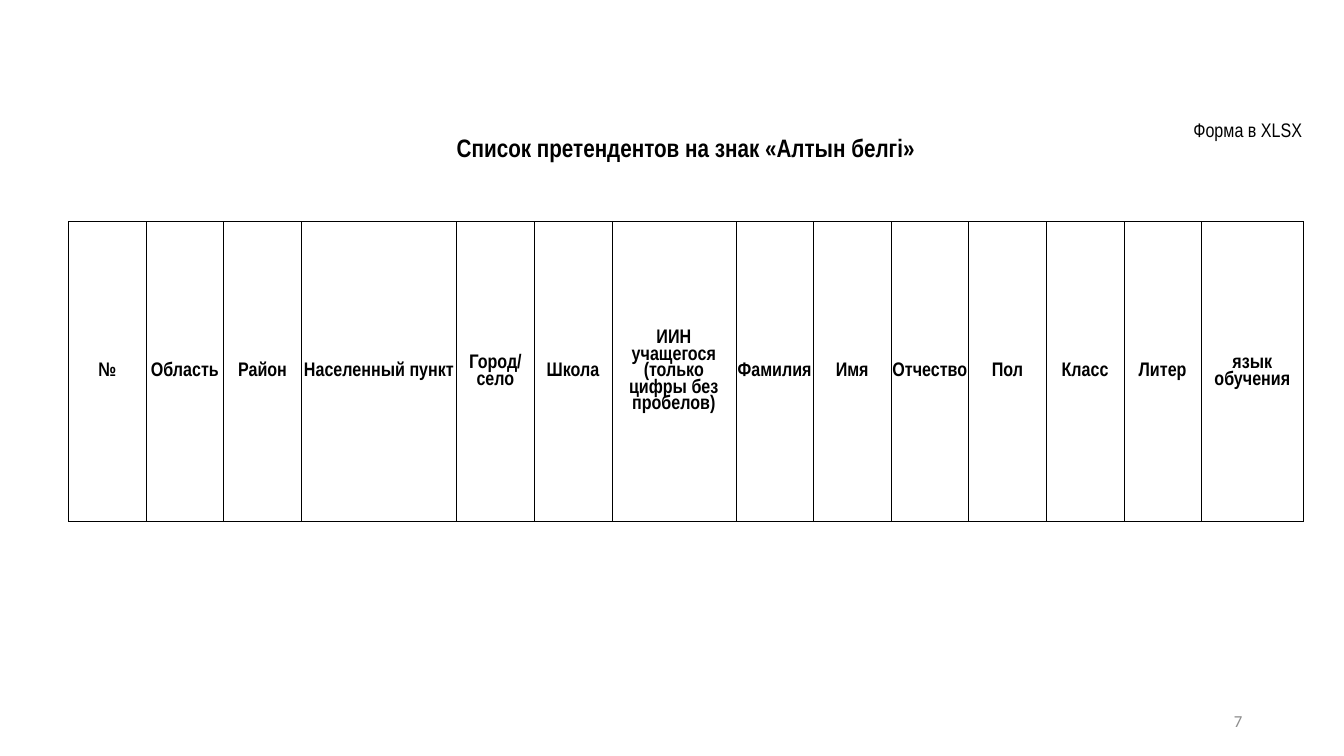
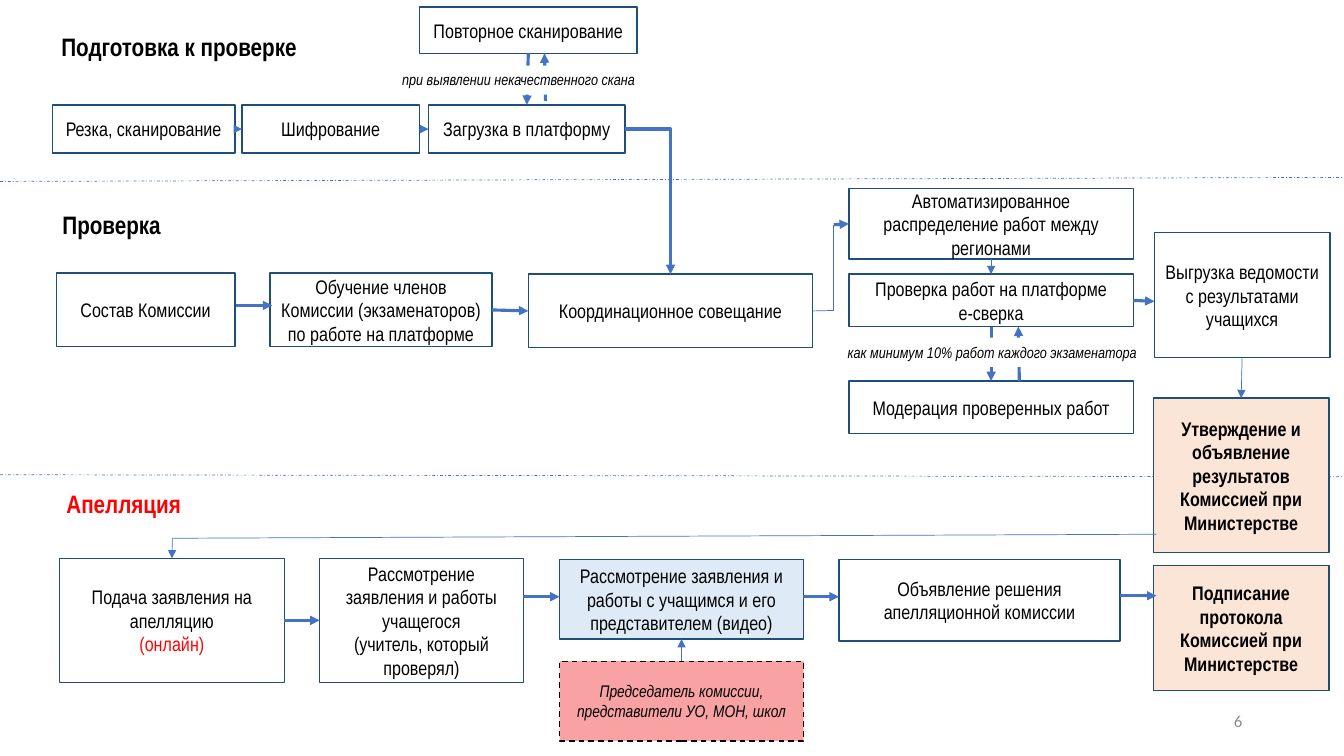
"""Build two slides: the award candidate form and the exam checking workflow."""
from dataclasses import dataclass, replace
from typing import NamedTuple

from pptx import Presentation
from pptx.dml.color import RGBColor
from pptx.enum.dml import MSO_LINE
from pptx.enum.shapes import MSO_CONNECTOR, MSO_SHAPE
from pptx.enum.text import MSO_ANCHOR, PP_ALIGN
from pptx.oxml.ns import qn
from pptx.oxml.xmlchemy import OxmlElement
from pptx.shapes.autoshape import Shape
from pptx.slide import Slide
from pptx.table import _Cell
from pptx.text.text import TextFrame
from pptx.util import Emu, Pt

LEFT, CENTER, RIGHT = PP_ALIGN.LEFT, PP_ALIGN.CENTER, PP_ALIGN.RIGHT
TOP_ANCHOR, MIDDLE_ANCHOR = MSO_ANCHOR.TOP, MSO_ANCHOR.MIDDLE
RECTANGLE = MSO_SHAPE.RECTANGLE
STRAIGHT, ELBOW = MSO_CONNECTOR.STRAIGHT, MSO_CONNECTOR.ELBOW
DASH, DASH_DOT = MSO_LINE.DASH, MSO_LINE.DASH_DOT
TOP, WEST, BOTTOM, EAST = range(4)

COLORS = {
    "black": "000000", "white": "FFFFFF", "red": "FF0000", "gray": "8C8C8C",
    "navy": "1F4E79", "blue": "4472C4", "peach": "FBE5D6", "sky": "DEEBF7",
    "pink": "F8A2A4",
}
EMU_PER_PX = 9144
THIN, MEDIUM, THICK = 0.5, 1, 2.25
FORM_SPACING = 0.89


@dataclass(frozen=True)
class Style:
    size: int = 14
    bold: bool = False
    italic: bool = False
    color: str = "black"
    align: PP_ALIGN = CENTER
    font: str = "Arial Narrow"
    spacing: float = 1.0


BODY = Style()
STRONG = Style(bold=True)
HEADING = Style(size=18, bold=True, align=LEFT)
REMARK = Style(size=11, italic=True, align=LEFT)
PAGE_NUMBER = Style(size=12, color="gray", align=RIGHT, font="Calibri")
COLUMN_HEAD = Style(bold=True, spacing=FORM_SPACING)


class Area(NamedTuple):
    left: int
    top: int
    width: int
    height: int


@dataclass(frozen=True)
class Step:
    key: str
    area: Area
    text: str
    fill: str = "white"
    style: Style = BODY
    last_color: str = "black"
    dashed: bool = False


class Joint(NamedTuple):
    step: str
    side: int


class Point(NamedTuple):
    x: int
    y: int


class Link(NamedTuple):
    start: Joint | Point
    end: Joint | Point
    weight: float = THICK
    arrow: bool = True
    elbow: bool = False
    dash: MSO_LINE | None = None


class Caption(NamedTuple):
    area: Area
    text: str
    style: Style


FORM_AREA = Area(68, 63, 1225, 454)
FORM_ROWS = (157, 297)
FORM_COLUMNS = (
    ("№", 77), ("Область", 77), ("Район", 77), ("Населенный пункт", 154),
    ("Город/ село", 77), ("Школа", 77),
    ("ИИН учащегося (только цифры без пробелов)", 123),
    ("Фамилия", 77), ("Имя", 77), ("Отчество", 77), ("Пол", 77),
    ("Класс", 77), ("Литер", 77), ("язык обучения", 101),
)
FORM_TITLE = (
    ("Форма в XLSX", Style(align=RIGHT, spacing=FORM_SPACING)),
    ("Список претендентов на знак «Алтын белгі»",
     Style(size=18, bold=True, spacing=FORM_SPACING)),
)

STEPS = (
    Step("cutting", Area(52, 104, 181, 48), "Резка, сканирование"),
    Step("encoding", Area(240, 104, 176, 48), "Шифрование"),
    Step("upload", Area(425, 104, 195, 48), "Загрузка в платформу"),
    Step("rescan", Area(416, 7, 216, 46), "Повторное сканирование"),
    Step("commission", Area(56, 271, 177, 73), "Состав Комиссии"),
    Step("training", Area(268, 271, 220, 73),
         "Обучение членов Комиссии (экзаменаторов) по работе на платформе"),
    Step("meeting", Area(524, 272, 282, 73), "Координационное совещание"),
    Step("distribution", Area(842, 187, 282, 70),
         "Автоматизированное распределение работ между регионами"),
    Step("marking", Area(842, 272, 282, 52),
         "Проверка работ на платформе\nе-сверка"),
    Step("moderation", Area(842, 378, 282, 52), "Модерация проверенных работ"),
    Step("export", Area(1145, 231, 174, 124),
         "Выгрузка ведомости с результатами учащихся"),
    Step("approval", Area(1144, 395, 174, 153),
         "Утверждение и объявление результатов Комиссией при Министерстве",
         "peach", STRONG),
    Step("appeal", Area(59, 554, 223, 123),
         "Подача заявления на апелляцию\n(онлайн)", last_color="red"),
    Step("teacher_review", Area(317, 554, 202, 123),
         "Рассмотрение заявления и работы учащегося\n"
         "(учитель, который проверял)"),
    Step("chair", Area(555, 656, 242, 79),
         "Председатель комиссии, представители УО, МОН, школ",
         "pink", Style(size=12, italic=True), dashed=True),
    Step("student_review", Area(555, 555, 242, 79),
         "Рассмотрение заявления и работы с учащимся и его "
         "представителем (видео)", "sky"),
    Step("decision", Area(832, 555, 279, 81),
         "Объявление решения апелляционной комиссии"),
    Step("signing", Area(1144, 561, 174, 124),
         "Подписание протокола Комиссией при Министерстве",
         "peach", STRONG),
)

DIVIDERS = (
    Link(Point(0, 180), Point(1333, 176), THIN, arrow=False, dash=DASH_DOT),
    Link(Point(0, 471), Point(1333, 473), THIN, arrow=False, dash=DASH_DOT),
)
LINKS = (
    Link(Joint("cutting", EAST), Joint("encoding", WEST), THIN),
    Link(Joint("encoding", EAST), Joint("upload", WEST), THIN),
    Link(Joint("rescan", BOTTOM), Joint("upload", TOP)),
    Link(Point(541, 100), Point(540, 53)),
    Link(Joint("upload", EAST), Joint("meeting", TOP), elbow=True),
    Link(Point(234, 303), Point(270, 303)),
    Link(Joint("training", EAST), Joint("meeting", WEST)),
    Link(Joint("meeting", EAST), Point(827, 308), THIN, arrow=False),
    Link(Point(827, 223), Point(827, 309), THIN, arrow=False),
    Link(Point(827, 223), Joint("distribution", WEST)),
    Link(Joint("distribution", BOTTOM), Joint("marking", TOP), THIN),
    Link(Joint("marking", BOTTOM), Joint("moderation", TOP)),
    Link(Point(1011, 378), Point(1010, 324)),
    Link(Joint("marking", EAST), Point(1145, 299)),
    Link(Joint("export", BOTTOM), Joint("approval", TOP), THIN),
    Link(Point(1147, 530), Point(171, 534), THIN, arrow=False),
    Link(Point(171, 534), Joint("appeal", TOP), THIN),
    Link(Joint("appeal", EAST), Joint("teacher_review", WEST)),
    Link(Point(519, 592), Point(555, 592)),
    Link(Point(796, 592), Point(832, 592)),
    Link(Point(1111, 591), Point(1147, 591)),
    Link(Joint("chair", TOP), Joint("student_review", BOTTOM), MEDIUM),
)
REMARKS = (
    Caption(Area(831, 335, 310, 29),
            "как минимум 10% работ каждого экзаменатора", REMARK),
    Caption(Area(389, 65, 403, 29),
            "при выявлении некачественного скана", REMARK),
)
HEADINGS = (
    Caption(Area(51, 26, 258, 40), "Подготовка к проверке", HEADING),
    Caption(Area(52, 203, 119, 40), "Проверка", HEADING),
    Caption(Area(56, 480, 141, 40), "Апелляция", replace(HEADING, color="red")),
)


def px(length: int) -> Emu:
    return Emu(length * EMU_PER_PX)


def rgb(name: str) -> RGBColor:
    return RGBColor.from_string(COLORS[name])


def write(frame: TextFrame, lines: tuple[tuple[str, Style], ...]) -> None:
    for index, (text, style) in enumerate(lines):
        paragraph = frame.add_paragraph() if index else frame.paragraphs[0]
        paragraph.text = text
        paragraph.alignment = style.align
        paragraph.line_spacing = style.spacing
        font = paragraph.font
        font.name, font.size = style.font, Pt(style.size)
        font.bold, font.italic = style.bold, style.italic
        font.color.rgb = rgb(style.color)


def add_caption(slide: Slide, caption: Caption, anchor: MSO_ANCHOR = TOP_ANCHOR) -> None:
    frame = slide.shapes.add_textbox(*map(px, caption.area)).text_frame
    frame.word_wrap = True
    frame.vertical_anchor = anchor
    write(frame, ((caption.text, caption.style),))


def add_page_number(slide: Slide, number: int) -> None:
    area = Area(942, 695, 300, 40)
    add_caption(slide, Caption(area, str(number), PAGE_NUMBER), MIDDLE_ANCHOR)


def add_panel(slide: Slide, area: Area, fill: str) -> Shape:
    panel = slide.shapes.add_shape(RECTANGLE, *map(px, area))
    panel.shadow.inherit = False
    panel.fill.solid()
    panel.fill.fore_color.rgb = rgb(fill)
    panel.line.fill.background()
    panel.text_frame.word_wrap = True
    return panel


def add_step(slide: Slide, step: Step) -> Shape:
    panel = add_panel(slide, step.area, step.fill)
    panel.line.color.rgb = rgb("black" if step.dashed else "navy")
    panel.line.width = Pt(MEDIUM)
    if step.dashed:
        panel.line.dash_style = DASH
    panel.text_frame.vertical_anchor = MIDDLE_ANCHOR
    *first, last = step.text.split("\n")
    last_style = replace(step.style, color=step.last_color)
    write(panel.text_frame, (*((line, step.style) for line in first), (last, last_style)))
    return panel


def add_remark(slide: Slide, remark: Caption) -> None:
    frame = add_panel(slide, remark.area, "white").text_frame
    frame.vertical_anchor = TOP_ANCHOR
    write(frame, ((remark.text, remark.style),))


def add_link(slide: Slide, link: Link, panels: dict[str, Shape]) -> None:
    ends = [end if isinstance(end, Point) else Point(0, 0) for end in link[:2]]
    connector = slide.shapes.add_connector(
        ELBOW if link.elbow else STRAIGHT, *map(px, (*ends[0], *ends[1])))
    for end, connect in zip(link[:2], (connector.begin_connect, connector.end_connect)):
        if isinstance(end, Joint):
            connect(panels[end.step], end.side)
    connector.line.color.rgb = rgb("blue")
    connector.line.width = Pt(link.weight)
    if link.dash is not None:
        connector.line.dash_style = link.dash
    properties = connector._element.spPr
    if link.elbow:
        properties.find(qn("a:prstGeom")).set("prst", "bentConnector2")
    if link.arrow:
        arrowhead = OxmlElement("a:tailEnd")
        arrowhead.set("type", "triangle")
        properties.find(qn("a:ln")).append(arrowhead)
    properties.append(OxmlElement("a:effectLst"))


def format_cell(cell: _Cell, ruled_sides: str) -> None:
    cell.margin_left = cell.margin_right = cell.margin_top = px(1)
    cell.margin_bottom = px(0)
    cell.vertical_anchor = MIDDLE_ANCHOR
    for side in "LRTB":
        border = OxmlElement(f"a:ln{side}")
        border.set("w", str(Pt(THIN)))
        paint = OxmlElement("a:solidFill" if side in ruled_sides else "a:noFill")
        if side in ruled_sides:
            color = OxmlElement("a:srgbClr")
            color.set("val", COLORS["black"])
            paint.append(color)
        border.append(paint)
        cell._tc.get_or_add_tcPr().append(border)
    cell.fill.background()


def build_form(slide: Slide) -> None:
    table = slide.shapes.add_table(
        len(FORM_ROWS), len(FORM_COLUMNS), *map(px, FORM_AREA)).table
    table.first_row = table.horz_banding = False
    for row, height in zip(table.rows, FORM_ROWS):
        row.height = px(height)
    for index, (name, width) in enumerate(FORM_COLUMNS):
        table.columns[index].width = px(width)
        format_cell(table.cell(0, index), "B")
        format_cell(table.cell(1, index), "LRTB")
        write(table.cell(1, index).text_frame, ((name, COLUMN_HEAD),))
    table.cell(0, 0).merge(table.cell(0, len(FORM_COLUMNS) - 1))
    write(table.cell(0, 0).text_frame, FORM_TITLE)
    add_page_number(slide, 7)


def build_workflow(slide: Slide) -> None:
    for divider in DIVIDERS:
        add_link(slide, divider, {})
    panels = {step.key: add_step(slide, step) for step in STEPS}
    for link in LINKS:
        add_link(slide, link, panels)
    for remark in REMARKS:
        add_remark(slide, remark)
    for heading in HEADINGS:
        add_caption(slide, heading)
    add_page_number(slide, 6)


def main() -> None:
    deck = Presentation()
    deck.slide_width, deck.slide_height = px(1333), px(750)
    for build in (build_form, build_workflow):
        build(deck.slides.add_slide(deck.slide_layouts[6]))
    deck.save("out.pptx")


if __name__ == "__main__":
    main()
